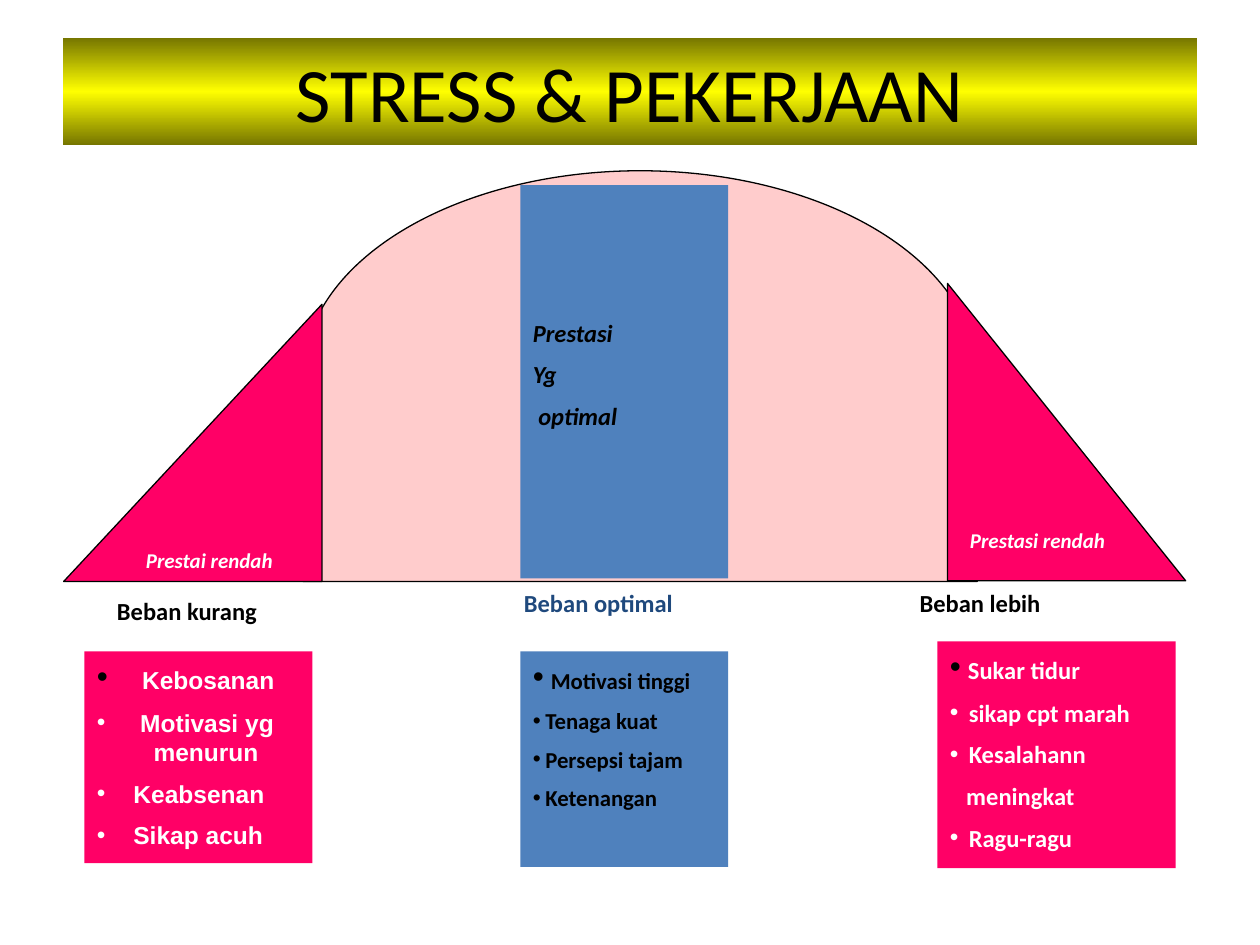
import pptx
import pptx.util
import pptx.dml.color
import pptx.enum.shapes
import pptx.enum.text
from lxml import etree

RGB = pptx.dml.color.RGBColor
SHAPE = pptx.enum.shapes.MSO_SHAPE
Inches, Pt = pptx.util.Inches, pptx.util.Pt
BLACK = RGB(0x00, 0x00, 0x00)
WHITE = RGB(0xFF, 0xFF, 0xFF)
YELLOW = RGB(0xFF, 0xFF, 0x00)
OLIVE = RGB(0x76, 0x76, 0x00)
PINK = RGB(0xFF, 0xCC, 0xCC)
MAGENTA = RGB(0xFF, 0x00, 0x66)
BLUE = RGB(0x4F, 0x81, 0xBD)
NAVY = RGB(0x1F, 0x49, 0x7D)

LABEL = dict(name="Calibri", size=Pt(14), bold=True)
LOW = dict(LABEL, size=Pt(12), italic=True)
HANG_LEFT, HANG_MID, HANG_RIGHT = 0.29, 0.1, 0.15


def add_shape(s, kind, box, fill=None, line=None, rotation=0):
    sp = s.shapes.add_shape(kind, *map(Inches, box))
    sp.shadow.inherit = False
    sp.rotation = rotation
    if fill is not None:
        sp.fill.solid()
        sp.fill.fore_color.rgb = fill
    if line is None:
        sp.line.fill.background()
    else:
        sp.line.color.rgb = line
        sp.line.width = Pt(0.75)
    return sp


def add_run(p, text, color, font):
    r = p.add_run()
    r.text = text
    for key, value in font.items():
        setattr(r.font, key, value)
    r.font.color.rgb = color


def add_paragraph(tf, first):
    p = tf.paragraphs[0] if first else tf.add_paragraph()
    p.alignment = pptx.enum.text.PP_ALIGN.LEFT
    return p


def write_lines(sp, lines, color, font, top=0.05):
    tf = sp.text_frame
    tf.word_wrap = True
    tf.margin_top = Inches(top)
    tf.vertical_anchor = pptx.enum.text.MSO_ANCHOR.TOP
    for i, text in enumerate(lines):
        p = add_paragraph(tf, i == 0)
        if i:
            p.space_before = font["size"] // 2
        add_run(p, text, color, font)


def add_label(s, box, text, color, font):
    write_lines(s.shapes.add_textbox(*map(Inches, box)), [text], color, font)


def set_indent(p, left, hang, bullet):
    pPr = p._p.get_or_add_pPr()
    pPr.set("marL", str(Inches(left)))
    pPr.set("indent", str(-Inches(hang)))
    if bullet:
        ns = pptx.oxml.ns.qn
        etree.SubElement(pPr, ns("a:buFont")).set("typeface", "Arial")
        etree.SubElement(pPr, ns("a:buChar")).set("char", "•")


def add_list(s, box, fill, color, font, items):
    """Items are (text, left margin, hanging indent, space before as a share
    of the text size); a line without a hanging indent has no bullet,
    except the first one, which has a larger black bullet."""
    tf = add_shape(s, SHAPE.RECTANGLE, box, fill).text_frame
    tf.word_wrap = True
    tf.vertical_anchor = pptx.enum.text.MSO_ANCHOR.TOP
    for i, (text, left, hang, gap) in enumerate(items):
        p = add_paragraph(tf, i == 0)
        if i:
            p.space_before = int(font["size"] * gap)
        set_indent(p, left, hang, i == 0 or hang > 0)
        if i == 0:
            add_run(p, " ", BLACK, dict(name=font["name"], size=Pt(18)))
        add_run(p, text, color, font)


def add_title(s, text):
    sp = add_shape(s, SHAPE.RECTANGLE, (0.5, 0.3, 9, 0.85))
    sp.fill.gradient()
    sp.fill.gradient_angle = 90
    stops = sp.fill._fill._gradFill.find(pptx.oxml.ns.qn("a:gsLst"))
    for stop in list(stops):
        stops.remove(stop)
    for pos, color in ((0, OLIVE), (50000, YELLOW), (100000, OLIVE)):
        gs = etree.SubElement(stops, pptx.oxml.ns.qn("a:gs"), pos=str(pos))
        etree.SubElement(gs, pptx.oxml.ns.qn("a:srgbClr"), val=str(color))
    tf = sp.text_frame
    tf.vertical_anchor = pptx.enum.text.MSO_ANCHOR.MIDDLE
    p = tf.paragraphs[0]
    p.alignment = pptx.enum.text.PP_ALIGN.CENTER
    add_run(p, text, BLACK, dict(name="Calibri", size=Pt(44)))


def main():
    prs = pptx.Presentation()
    prs.slide_width, prs.slide_height = Inches(10), Inches(7.5)
    s = prs.slides.add_slide(prs.slide_layouts[6])
    add_title(s, "STRESS & PEKERJAAN")

    # Performance curve with its optimal band
    add_shape(s, SHAPE.FLOWCHART_DELAY, (3.45, 0.31, 3.26, 5.35),
              PINK, BLACK, 270)
    band = add_shape(s, SHAPE.RECTANGLE, (4.13, 1.47, 1.65, 3.12), BLUE)
    write_lines(band, ["Prestasi", "Yg", " optimal"], BLACK,
                dict(LABEL, italic=True), top=1.05)

    # Workload labels under the curve
    add_label(s, (0.83, 4.68, 1.81, 0.33), "Beban kurang", BLACK, LABEL)
    add_label(s, (4.06, 4.62, 1.89, 0.33), "Beban optimal", NAVY, LABEL)
    add_label(s, (7.2, 4.62, 1.97, 0.33), "Beban lebih", BLACK, LABEL)

    # Low-performance slopes
    add_shape(s, SHAPE.RIGHT_TRIANGLE, (0.43, 2.49, 2.2, 2.05),
              MAGENTA, BLACK, 270)
    add_shape(s, SHAPE.RIGHT_TRIANGLE, (7.52, 2.25, 1.89, 2.36),
              MAGENTA, BLACK)
    add_label(s, (1.06, 4.3, 1.5, 0.3), "Prestai rendah", WHITE, LOW)
    add_label(s, (7.6, 4.14, 1.57, 0.3), "Prestasi rendah", WHITE, LOW)

    # Effects of each workload
    add_list(s, (0.67, 5.17, 1.81, 1.68), MAGENTA, WHITE,
             dict(LABEL, name="Arial"),
             [("Kebosanan", HANG_LEFT, HANG_LEFT, 0.5),
              (" Motivasi yg", HANG_LEFT, HANG_LEFT, 0.5),
              ("menurun", 0.45, 0, 0),
              ("Keabsenan", HANG_LEFT, HANG_LEFT, 0.5),
              ("Sikap acuh", HANG_LEFT, HANG_LEFT, 0.5)])
    add_list(s, (4.13, 5.17, 1.65, 1.71), BLUE, BLACK,
             dict(LABEL, size=Pt(13)),
             [("Motivasi tinggi", 0, 0, 0.5)]
             + [(text, HANG_MID, HANG_MID, 0.5) for text in
                ("Tenaga kuat", "Persepsi tajam", "Ketenangan")])
    add_list(s, (7.44, 5.09, 1.89, 1.8), MAGENTA, WHITE, LABEL,
             [("Sukar tidur", 0, 0, 0.5),
              ("sikap cpt marah", HANG_RIGHT, HANG_RIGHT, 0.5),
              ("Kesalahann", HANG_RIGHT, HANG_RIGHT, 0.5),
              ("meningkat", 0.13, 0, 0.5),
              ("Ragu-ragu", HANG_RIGHT, HANG_RIGHT, 0.5)])
    prs.save("out.pptx")


if __name__ == "__main__":
    main()
